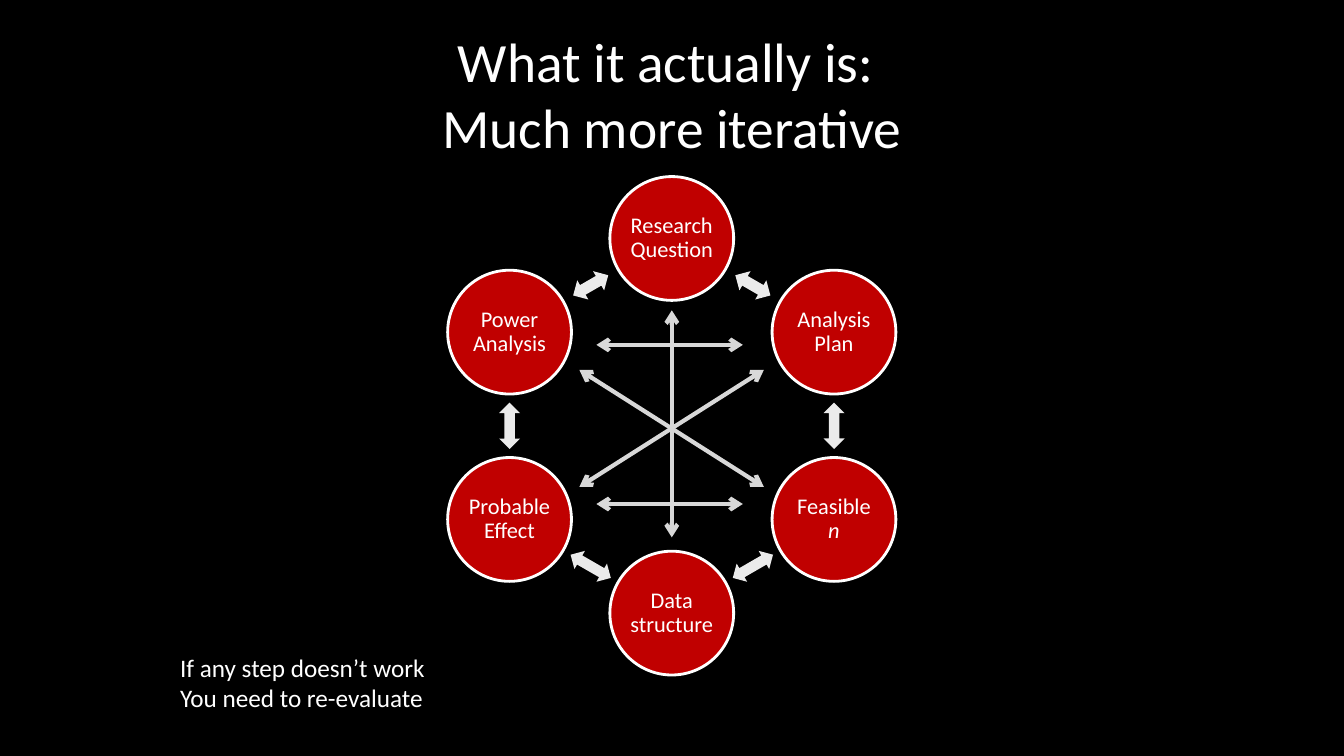
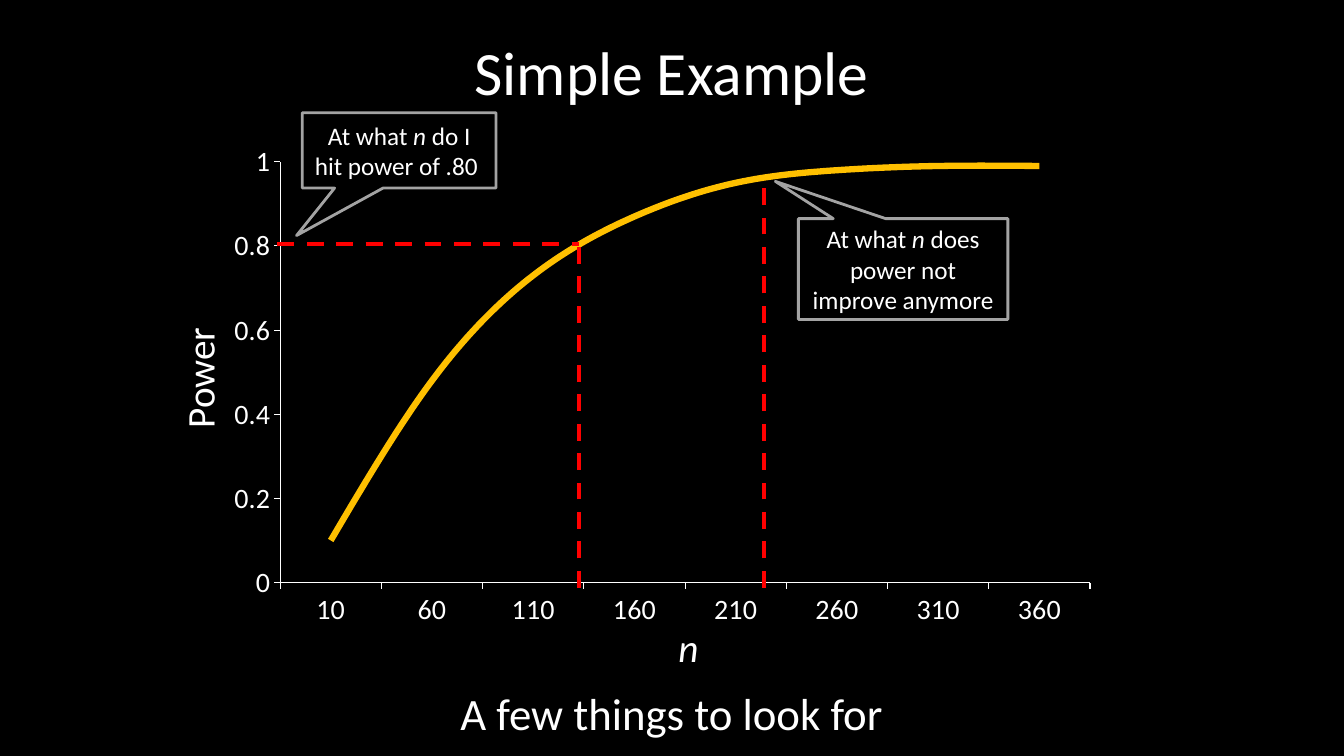
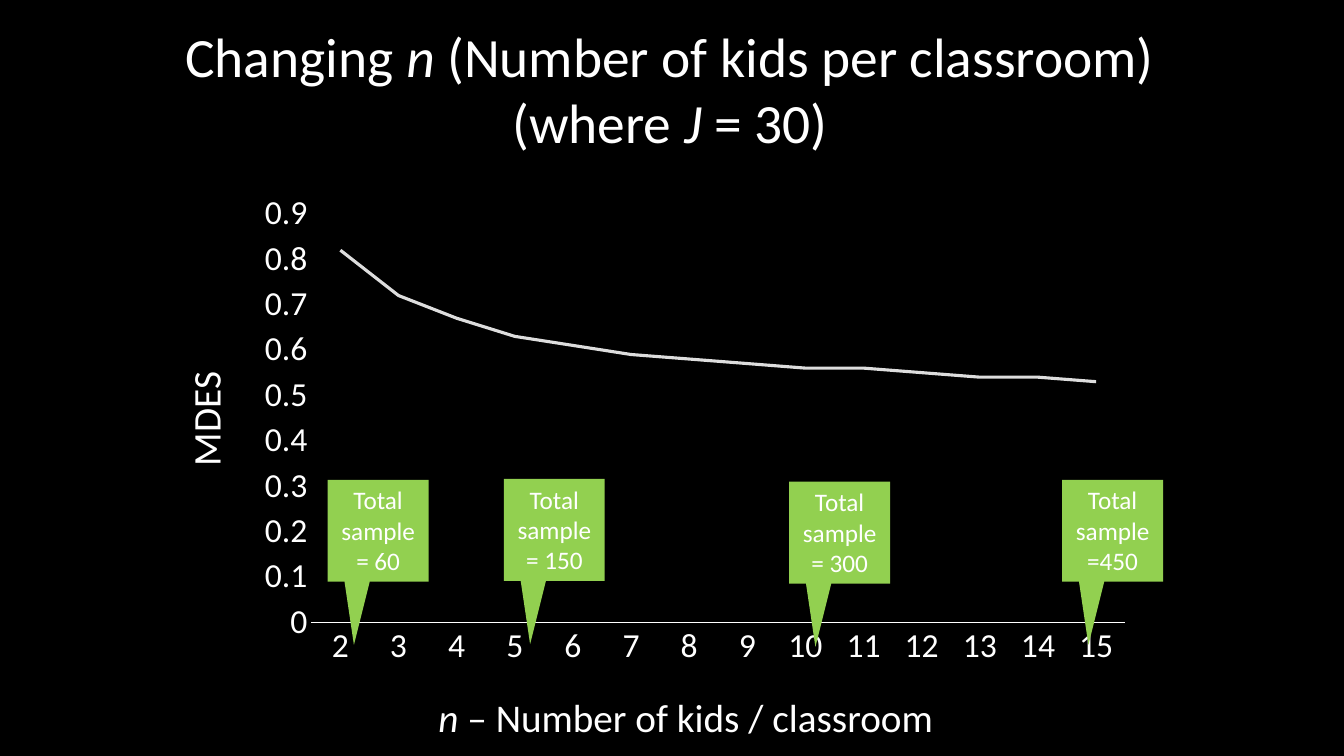
import math

from pptx import Presentation
from pptx.chart.data import CategoryChartData
from pptx.dml.color import RGBColor
from pptx.enum.chart import XL_CHART_TYPE, XL_TICK_MARK
from pptx.enum.dml import MSO_LINE
from pptx.enum.shapes import MSO_CONNECTOR, MSO_SHAPE
from pptx.enum.text import MSO_ANCHOR, PP_ALIGN
from pptx.oxml import parse_xml
from pptx.oxml.ns import nsdecls
from pptx.oxml.xmlchemy import OxmlElement
from pptx.util import Cm, Pt

BLACK = RGBColor(0x00, 0x00, 0x00)
WHITE = RGBColor(0xFF, 0xFF, 0xFF)
DARK_RED = RGBColor(0xC0, 0x00, 0x00)
RED = RGBColor(0xFF, 0x00, 0x00)
GOLD = RGBColor(0xFF, 0xC0, 0x00)
GREEN = RGBColor(0x92, 0xD0, 0x50)
ARROW_GRAY = RGBColor(0xEB, 0xEB, 0xEB)
LINE_GRAY = RGBColor(0xD8, 0xD8, 0xD8)
CURVE_GRAY = RGBColor(0xDD, 0xDD, 0xDD)
BORDER_GRAY = RGBColor(0xA3, 0xA3, 0xA3)
FONT = "Calibri"

LEFT, CENTER = PP_ALIGN.LEFT, PP_ALIGN.CENTER
TOP, MIDDLE = MSO_ANCHOR.TOP, MSO_ANCHOR.MIDDLE
ELLIPSE = MSO_SHAPE.OVAL
DOUBLE_ARROW = MSO_SHAPE.LEFT_RIGHT_ARROW
CALLOUT = MSO_SHAPE.RECTANGULAR_CALLOUT
STRAIGHT = MSO_CONNECTOR.STRAIGHT
DASH = MSO_LINE.DASH
TICK_OUT, TICK_NONE = XL_TICK_MARK.OUTSIDE, XL_TICK_MARK.NONE


def add_text(slide, text, box, size=18, align=CENTER, anchor=TOP, kind=None,
             fill=None, border=None, adj=(), rotation=0, inset=None, spacing=None):
    """Add a text box, or a preset shape if kind is given; *stars* mark italics."""
    box = [Cm(v) for v in box]
    if kind is None:
        sp = slide.shapes.add_textbox(*box)
    else:
        sp = slide.shapes.add_shape(kind, *box)
        sp.shadow.inherit = False
        if fill is None:
            sp.fill.background()
        else:
            sp.fill.solid()
            sp.fill.fore_color.rgb = fill
        if border is None:
            sp.line.fill.background()
        else:
            sp.line.color.rgb = border
            sp.line.width = Pt(2)
        for i, value in enumerate(adj):
            sp.adjustments[i] = value
    sp.rotation = rotation
    tf = sp.text_frame
    tf.word_wrap = True
    tf.vertical_anchor = anchor
    if inset is not None:
        tf.margin_left = tf.margin_right = tf.margin_top = tf.margin_bottom = Cm(inset)
    for i, line in enumerate(text.split("\n")):
        p = tf.add_paragraph() if i else tf.paragraphs[0]
        p.alignment = align
        p.line_spacing = spacing
        for j, part in enumerate(line.split("*")):
            if part:
                r = p.add_run()
                r.text = part
                r.font.name = FONT
                r.font.size = Pt(size)
                r.font.color.rgb = WHITE
                r.font.italic = j % 2 == 1


def add_line(slide, ends, color, dash=None, arrows=False):
    cxn = slide.shapes.add_connector(STRAIGHT, *[Cm(v) for v in ends])
    cxn.line.color.rgb = color
    cxn.line.width = Pt(3)
    if dash is not None:
        cxn.line.dash_style = dash
    if arrows:
        ln = cxn.line._get_or_add_ln()
        for tag in ("a:headEnd", "a:tailEnd"):
            end = OxmlElement(tag)
            end.set("type", "arrow")
            ln.append(end)
    cxn._element.spPr.append(OxmlElement("a:effectLst"))


prs = Presentation()
prs.slide_width, prs.slide_height = Cm(33.87), Cm(19.05)
background = prs.slide_master.background.fill
background.solid()
background.fore_color.rgb = BLACK

titles = [
    ("What it actually is: \nMuch more iterative", (1.7, 0.76, 30.48, 3.18), 39.6),
    ("Simple Example", (5.5, 0.2, 22.86, 3.18), 44),
    ("Changing *n *(Number of kids per classroom) \n(where *J* = 30) ",
     (0.85, 0.64, 32.38, 3.18), 39.6),
]
slides = []
for text, box, size in titles:
    slide = prs.slides.add_slide(prs.slide_layouts[6])
    add_text(slide, text, box, size=size, anchor=MIDDLE)
    slides.append(slide)
cycle_slide, power_slide, mdes_slide = slides

# Slide 1: ring of steps
CX, CY, RING, CIRCLE = 16.93, 10.73, 4.72, 3.12
steps = ["Research Question", "Analysis Plan", "Feasible *n*",
         "Data structure", "Probable Effect", "Power Analysis"]
for i, step in enumerate(steps):
    angle = math.radians(60 * i - 90)
    x, y = CX + RING * math.cos(angle), CY + RING * math.sin(angle)
    add_text(cycle_slide, step, (x - CIRCLE / 2, y - CIRCLE / 2, CIRCLE, CIRCLE),
             size=16, anchor=MIDDLE, kind=ELLIPSE, fill=DARK_RED, border=WHITE,
             inset=0.05, spacing=0.9)
    angle += math.radians(30)
    gap = RING * math.cos(math.radians(30))
    x, y = CX + gap * math.cos(angle), CY + gap * math.sin(angle)
    w, h = (1.02, 0.56) if i in (0, 5) else (1.17, 0.53)
    add_text(cycle_slide, "", (x - w / 2, y - h / 2, w, h), kind=DOUBLE_ARROW,
             fill=ARROW_GRAY, rotation=60 * i + 30)

for ends in [(14.6, 9.32, 19.25, 12.27), (14.6, 12.27, 19.25, 9.32),
             (CX, 13.54, CX, 7.82),
             (15.03, 8.69, 18.72, 8.69), (15.03, 12.7, 18.72, 12.7)]:
    add_line(cycle_slide, ends, LINE_GRAY, arrows=True)
add_text(cycle_slide, "If any step doesn’t work\nYou need to re-evaluate",
         (4.29, 16.31, 7.2, 1.8), align=LEFT)

# Charts of slides 2 and 3
charts = [
    dict(slide=power_slide, box=(5.49, 3.38, 22.43, 12.7),
         plot=(0.07, 0.055, 0.91, 0.835), cats=range(10, 361, 50),
         vals=[0.1, 0.48, 0.73, 0.87, 0.95, 0.98, 0.99, 0.99],
         color=GOLD, width=4.5, smooth=True, size=20, top=1, step=0.2, tick=TICK_OUT),
    dict(slide=mdes_slide, box=(6.35, 4.24, 22.02, 14.05),
         plot=(0.068, 0.082, 0.932, 0.732), cats=range(2, 16),
         vals=[0.82, 0.72, 0.67, 0.63, 0.61, 0.59, 0.58, 0.57, 0.56, 0.56,
               0.55, 0.54, 0.54, 0.53],
         color=CURVE_GRAY, width=2.25, smooth=False, size=24, top=0.9, step=0.1,
         tick=TICK_NONE),
]
for c in charts:
    data = CategoryChartData()
    data.categories = [str(n) for n in c["cats"]]
    data.add_series("Series 1", c["vals"])
    chart = c["slide"].shapes.add_chart(
        XL_CHART_TYPE.LINE, *[Cm(v) for v in c["box"]], data).chart
    chart.has_legend = chart.has_title = False
    chart.font.name = FONT
    chart.font.size = Pt(c["size"])
    chart.font.color.rgb = WHITE
    plot = chart.plots[0]
    plot.vary_by_categories = False
    series = plot.series[0]
    series.smooth = c["smooth"]
    series.format.line.color.rgb = c["color"]
    series.format.line.width = Pt(c["width"])
    for axis in (chart.category_axis, chart.value_axis):
        axis.has_major_gridlines = False
        axis.major_tick_mark = c["tick"]
        axis.minor_tick_mark = TICK_NONE
        axis.format.line.color.rgb = WHITE
        axis.format.line.width = Pt(0.75)
    axis = chart.value_axis
    axis.minimum_scale, axis.maximum_scale = 0, c["top"]
    axis.major_unit = c["step"]
    axis.tick_labels.number_format = "General"
    axis.tick_labels.number_format_is_linked = False
    if c["tick"] == TICK_NONE:
        axis.format.line.fill.background()
    x, y, w, h = c["plot"]
    area = chart._chartSpace.chart.plotArea
    for old in area.findall("{*}layout"):
        area.remove(old)
    area.insert(0, parse_xml(
        f'<c:layout {nsdecls("c")}><c:manualLayout><c:layoutTarget val="inner"/>'
        '<c:xMode val="edge"/><c:yMode val="edge"/>'
        f'<c:x val="{x}"/><c:y val="{y}"/><c:w val="{w}"/><c:h val="{h}"/>'
        '</c:manualLayout></c:layout>'))

# Slide 2: labels, callouts and reading lines
add_text(power_slide, "A few things to look for", (5.5, 17.15, 22.86, 1.8), size=32)
add_text(power_slide, "Power", (2.61, 8.71, 5, 1.63), size=28, rotation=270)
add_text(power_slide, "*n*", (5.92, 15.57, 22.86, 1.57), size=28)
for text, box, adj in [
    ("At what *n* do I hit power of .80 ", (7.62, 2.84, 4.88, 1.9), (-0.53, 1.13)),
    ("At what *n* does power not improve anymore", (20.12, 5.51, 5.28, 2.54),
     (-0.61, -0.87)),
]:
    add_text(power_slide, text, box, anchor=MIDDLE, kind=CALLOUT,
             border=BORDER_GRAY, adj=adj)
for ends in [(6.99, 6.15, 14.6, 6.15), (14.6, 14.81, 14.6, 6.15),
             (19.25, 14.81, 19.25, 4.55)]:
    add_line(power_slide, ends, RED, dash=DASH)

# Slide 3: axis labels and sample sizes
add_text(mdes_slide, "MDES", (3.17, 9.83, 4, 1.45), size=28, rotation=270)
add_text(mdes_slide, "*n* – Number of kids / classroom", (10.8, 17.35, 14.2, 1.45),
         size=28, align=LEFT)
for total, x, y in [("= 60", 8.26, 12.09), ("= 150", 12.7, 12.07),
                    ("= 300", 19.89, 12.14), ("=450", 26.77, 12.09)]:
    add_text(mdes_slide, f"Total sample {total}", (x, y, 2.54, 2.57), kind=CALLOUT,
             fill=GREEN, adj=(-0.24, 1.12))

prs.save("out.pptx")
